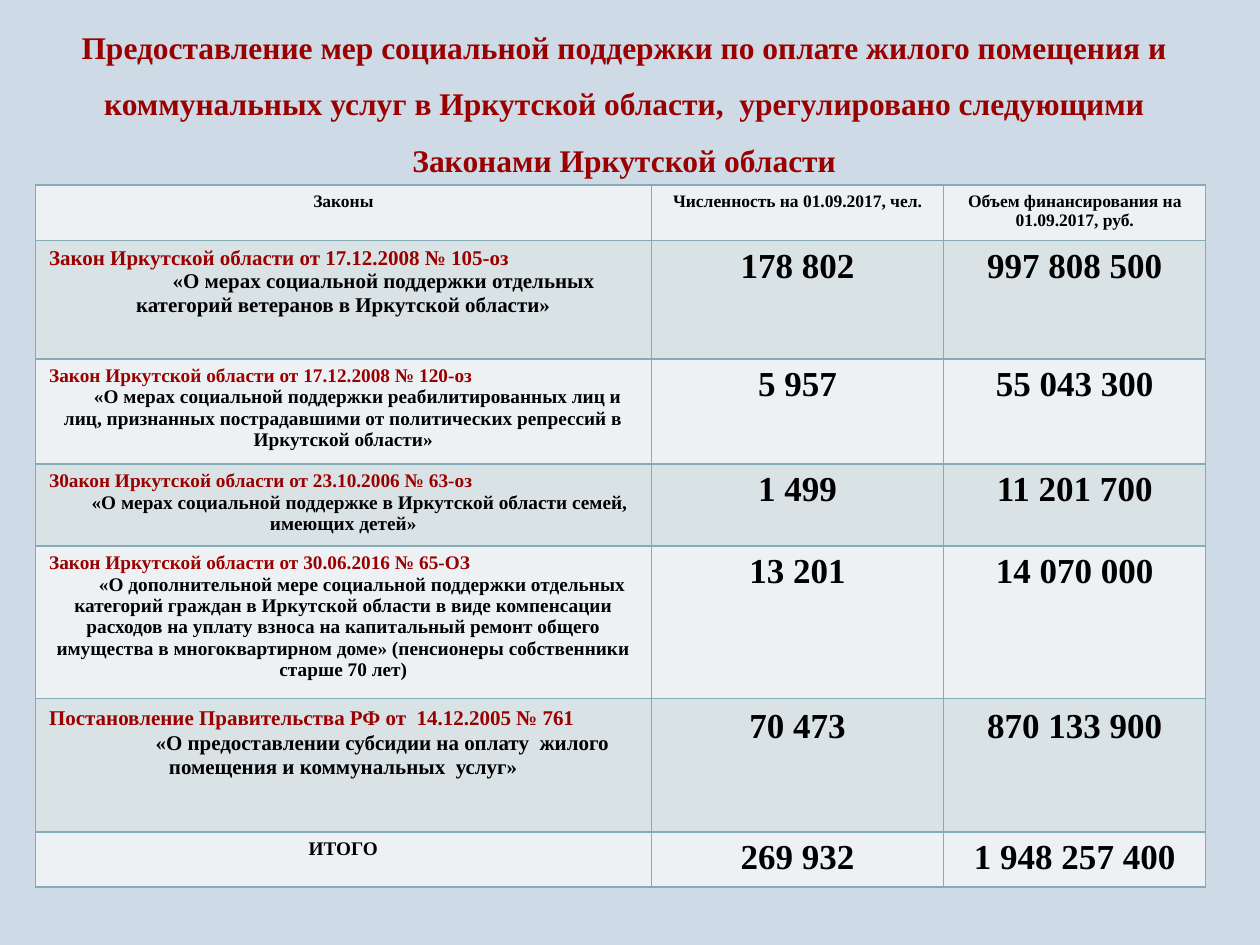
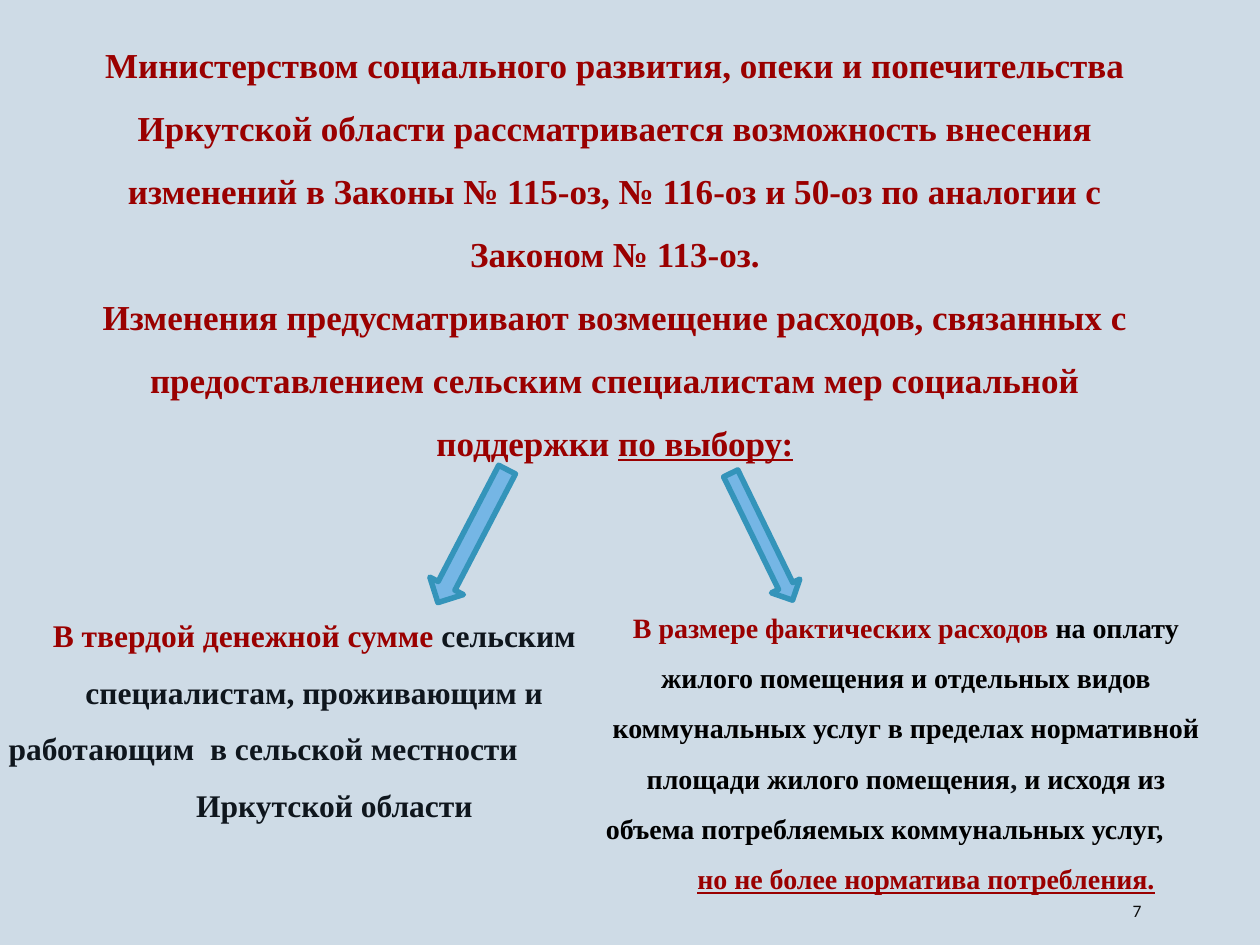
"""Builds two slides on social support measures for housing costs."""
from dataclasses import dataclass

from lxml import etree
from pptx import Presentation
from pptx.dml.color import RGBColor
from pptx.enum.shapes import MSO_SHAPE
from pptx.enum.text import MSO_ANCHOR, MSO_AUTO_SIZE, PP_ALIGN
from pptx.oxml.ns import qn
from pptx.util import Inches, Pt

DOWN_ARROW = MSO_SHAPE.DOWN_ARROW
CENTER, LEFT = PP_ALIGN.CENTER, PP_ALIGN.LEFT
TOP, MIDDLE = MSO_ANCHOR.TOP, MSO_ANCHOR.MIDDLE
GROW, FIXED = MSO_AUTO_SIZE.SHAPE_TO_FIT_TEXT, MSO_AUTO_SIZE.NONE

SERIF, SANS = "Times New Roman", "Calibri"
BACKGROUND, RED, BLACK, INK = "CEDBE6", "9A0000", "000000", "0F161D"
ROW_FILLS = ("EDF1F3", "D9E3E5")
BORDER = "84ACB6"
COLUMN_WIDTHS = (4.89, 2.32, 2.08)
HEADINGS = (
    "Законы",
    "Численность на 01.09.2017, чел.",
    "Объем финансирования на 01.09.2017, руб.",
)


@dataclass(frozen=True)
class Span:
    """A run of text with its own format."""
    text: str
    size: float
    color: str = BLACK
    bold: bool = True
    underline: bool = False
    font: str = SERIF


@dataclass(frozen=True)
class Para:
    """A paragraph with a first-line indent in inches."""
    spans: tuple[Span, ...]
    align: PP_ALIGN = CENTER
    spacing: float = 1.0
    indent: float = 0


@dataclass(frozen=True)
class Area:
    """A place on the slide in inches."""
    left: float
    top: float
    width: float
    height: float

    def lengths(self) -> tuple:
        """Return the four lengths for a shape call."""
        return tuple(map(Inches, (self.left, self.top, self.width, self.height)))


@dataclass(frozen=True)
class Law:
    """A table row about one law; indent moves the first line of its title."""
    name: str
    title: str
    people: str
    funding: str
    height: float
    size: float = 11
    indent: float = 0
    spacing: float = 1.0


@dataclass(frozen=True)
class Arrow:
    """A turned block arrow."""
    area: Area
    rotation: float


LAWS = (
    Law("Закон Иркутской области от 17.12.2008 № 105-оз",
        "«О мерах социальной поддержки отдельных категорий ветеранов в Иркутской области»",
        "178 802", "997 808 500", 0.94, 12, 0.64),
    Law("Закон Иркутской области от 17.12.2008 № 120-оз",
        "«О мерах социальной поддержки реабилитированных лиц и лиц, признанных "
        "пострадавшими от политических репрессий в Иркутской области»",
        "5 957", "55 043 300", 0.83, indent=0.23),
    Law("З0акон Иркутской области от 23.10.2006 № 63-оз",
        "«О мерах социальной поддержке в Иркутской области семей, имеющих детей»",
        "1 499", "11 201 700", 0.65, indent=0.26),
    Law("Закон Иркутской области от 30.06.2016 № 65-ОЗ",
        "«О дополнительной мере социальной поддержки отдельных категорий граждан "
        "в Иркутской области в виде компенсации расходов на уплату взноса на "
        "капитальный ремонт общего имущества в многоквартирном доме» "
        "(пенсионеры собственники старше 70 лет)",
        "13 201", "14 070 000", 1.21, indent=0.3),
    Law("Постановление Правительства РФ от  14.12.2005 № 761",
        "«О предоставлении субсидии на оплату  жилого помещения и коммунальных  услуг»",
        "70 473", "870 133 900", 1.06, 12, 0.62, 1.07),
)

ARROWS = (
    Arrow(Area(3.6, 3.66, 0.3, 1.19), 27.5),
    Arrow(Area(5.92, 3.7, 0.25, 1.12), 334),
)


def rgb(value: str) -> RGBColor:
    """Turn a hex string into a colour."""
    return RGBColor.from_string(value)


def write(frame, paras: tuple[Para, ...]) -> None:
    """Fill a text frame with paragraphs."""
    for index, para in enumerate(paras):
        paragraph = frame.add_paragraph() if index else frame.paragraphs[0]
        paragraph.alignment = para.align
        paragraph.line_spacing = para.spacing
        if para.indent:
            properties = paragraph._p.get_or_add_pPr()
            properties.set("marL", "0")
            properties.set("indent", str(Inches(para.indent)))
        for span in para.spans:
            run = paragraph.add_run()
            run.text = span.text
            formats = {"name": span.font, "size": Pt(span.size),
                       "bold": span.bold, "underline": span.underline}
            for name, value in formats.items():
                setattr(run.font, name, value)
            run.font.color.rgb = rgb(span.color)


def add_text(page, area: Area, paras: tuple[Para, ...],
             anchor: MSO_ANCHOR = TOP, fit: MSO_AUTO_SIZE = GROW) -> None:
    """Add a wrapping text box."""
    frame = page.shapes.add_textbox(*area.lengths()).text_frame
    formats = {"word_wrap": True, "auto_size": fit, "vertical_anchor": anchor}
    for name, value in formats.items():
        setattr(frame, name, value)
    write(frame, paras)


def add_heading(page, area: Area, size: float, *lines: tuple[Span, ...]) -> None:
    """Add the shared red heading with wide line spacing."""
    add_text(page, area, tuple(Para(spans, spacing=1.5) for spans in lines))


def add_arrow(page, arrow: Arrow) -> None:
    """Add one blue block arrow."""
    shape = page.shapes.add_shape(DOWN_ARROW, *arrow.area.lengths())
    shape.rotation = arrow.rotation
    shape.shadow.inherit = False
    shape.fill.solid()
    shape.fill.fore_color.rgb = rgb("75B6E5")
    shape.line.color.rgb = rgb("3494BA")
    shape.line.width = Pt(3.15)


def style_cell(cell, fill: str) -> None:
    """Give a cell its borders and fill."""
    properties = cell._tc.get_or_add_tcPr()
    for side in ("a:lnL", "a:lnR", "a:lnT", "a:lnB"):
        line = etree.SubElement(properties, qn(side), w=str(Pt(1)))
        solid = etree.SubElement(line, qn("a:solidFill"))
        etree.SubElement(solid, qn("a:srgbClr"), val=BORDER)
    cell.fill.solid()
    cell.fill.fore_color.rgb = rgb(fill)


def single(text: str, size: float, spacing: float = 1.0) -> tuple[Para, ...]:
    """Return one centred black paragraph."""
    return (Para((Span(text, size),), spacing=spacing),)


def law_cells(law: Law) -> tuple[tuple[Para, ...], ...]:
    """Return the contents of the three cells of a law row."""
    description = (
        Para((Span(law.name, law.size, RED),), LEFT, law.spacing, 0.01),
        Para((Span(law.title, law.size),), CENTER, law.spacing, law.indent),
    )
    numbers = (single(text, 20, law.spacing) for text in (law.people, law.funding))
    return (description, *numbers)


def add_law_table(page) -> None:
    """Add the table of laws with its heading and total rows."""
    rows = [tuple(single(text, 10) for text in HEADINGS)]
    rows += [law_cells(law) for law in LAWS]
    rows.append((single("ИТОГО", 11), single("269 932", 20), single("1 948 257 400", 20)))
    heights = (0.44, *(law.height for law in LAWS), 0.43)
    area = Area(0.28, 1.47, sum(COLUMN_WIDTHS), sum(heights))
    table = page.shapes.add_table(len(rows), len(COLUMN_WIDTHS), *area.lengths()).table
    for column, width in zip(table.columns, COLUMN_WIDTHS):
        column.width = Inches(width)
    for index, (row, height) in enumerate(zip(rows, heights)):
        table.rows[index].height = Inches(height)
        for position, paras in enumerate(row):
            cell = table.cell(index, position)
            style_cell(cell, ROW_FILLS[index % 2])
            write(cell.text_frame, paras)


def add_page(deck):
    """Add a blank page with the shared background."""
    page = deck.slides.add_slide(deck.slide_layouts[6])
    page.background.fill.solid()
    page.background.fill.fore_color.rgb = rgb(BACKGROUND)
    return page


def build_laws_page(deck) -> None:
    """Build the page with the table of laws."""
    page = add_page(deck)
    title = ("Предоставление мер социальной поддержки по оплате жилого помещения и "
             "коммунальных услуг в Иркутской области,  урегулировано следующими "
             "Законами Иркутской области")
    add_heading(page, Area(0.35, 0.02, 9.21, 1.42), 18, (Span(title, 18, RED),))
    add_law_table(page)


def build_choice_page(deck) -> None:
    """Build the page with the two ways of compensation."""
    page = add_page(deck)
    add_heading(
        page, Area(0.39, 0.13, 8.98, 3.57), 20,
        (Span("Министерством социального развития, опеки и попечительства Иркутской "
              "области рассматривается возможность внесения изменений в Законы "
              "№ 115-оз, № 116-оз и 50-оз по аналогии с Законом № 113-оз.", 20, RED),),
        (Span("Изменения предусматривают возмещение расходов, связанных с "
              "предоставлением сельским специалистам мер социальной поддержки ", 20, RED),
         Span("по выбору:", 20, RED, underline=True)),
    )
    add_text(page, Area(8.89, 7.08, 0.8, 0.3),
             (Para((Span("7", 10, "0D0D0D", False, font=SANS),), LEFT),), MIDDLE, FIXED)
    add_text(page, Area(4.69, 4.66, 5, 2.48), (
        Para((Span("В размере фактических расходов ", 16, RED),
              Span("на оплату жилого помещения и отдельных видов коммунальных услуг "
                   "в пределах нормативной площади жилого помещения", 16),
              Span(", ", 16, INK),
              Span("и исходя из", 16)), spacing=1.5),
        Para((Span("объема потребляемых коммунальных услуг,", 16),), LEFT, 1.5, 0.02),
        Para((Span("но не более норматива потребления.", 16, RED, underline=True),),
             CENTER, 1.5, 0.32),
    ))
    add_text(page, Area(-0.04, 4.69, 5.07, 1.87), (
        Para((Span("В твердой денежной сумме ", 18, RED),
              Span("сельским специалистам, проживающим и", 18, INK)), spacing=1.5),
        Para((Span("работающим  в сельской местности", 18, INK),), LEFT, 1.5, 0.01),
        Para((Span("Иркутской области", 18, INK),), CENTER, 1.5, 0.32),
    ))
    for arrow in ARROWS:
        add_arrow(page, arrow)


def main() -> None:
    """Build and save the deck."""
    deck = Presentation()
    deck.slide_width, deck.slide_height = Inches(10), Inches(7.5)
    build_laws_page(deck)
    build_choice_page(deck)
    deck.save("out.pptx")


if __name__ == "__main__":
    main()
